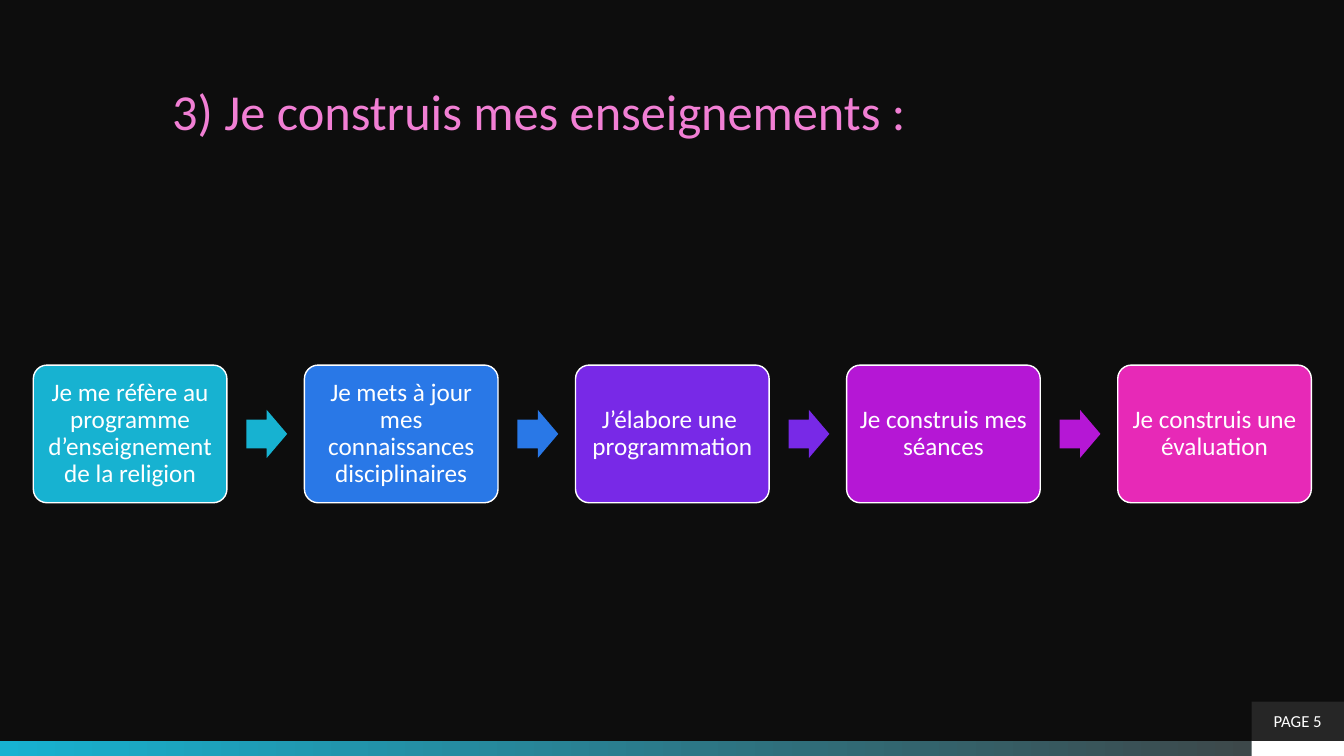
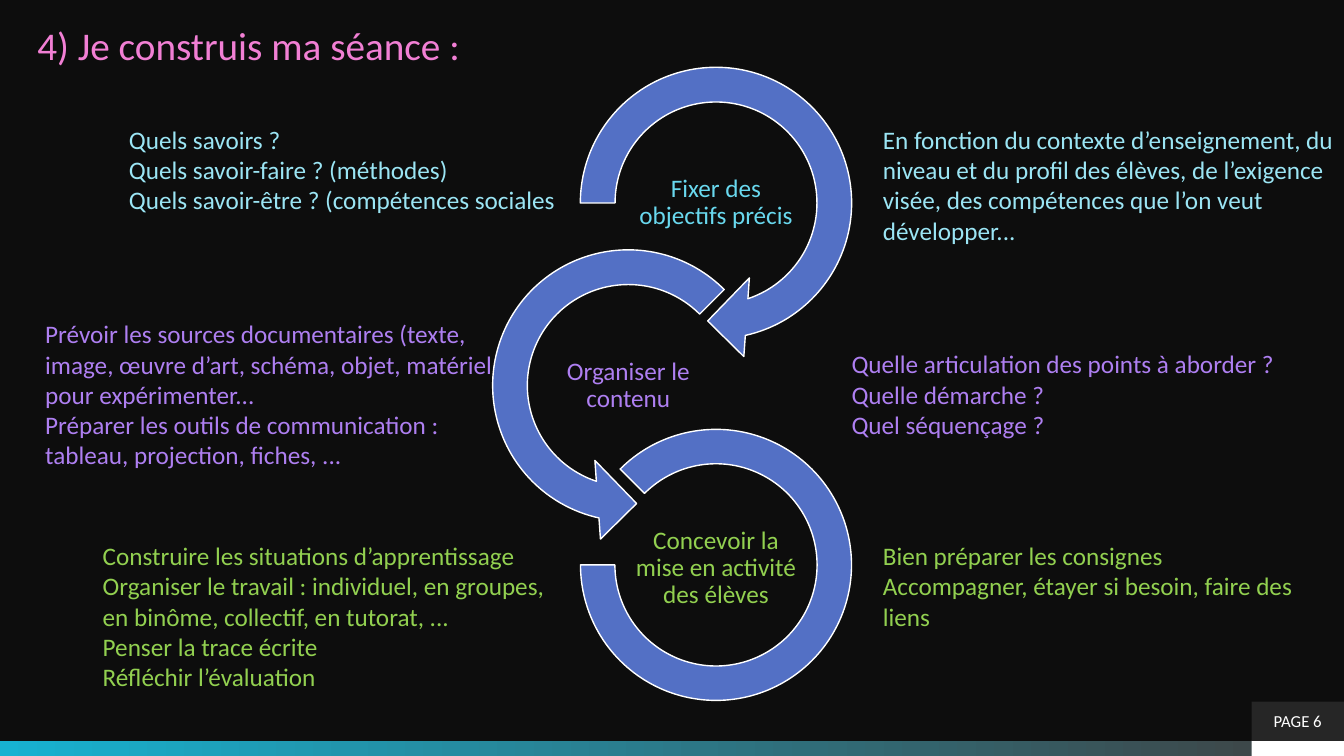
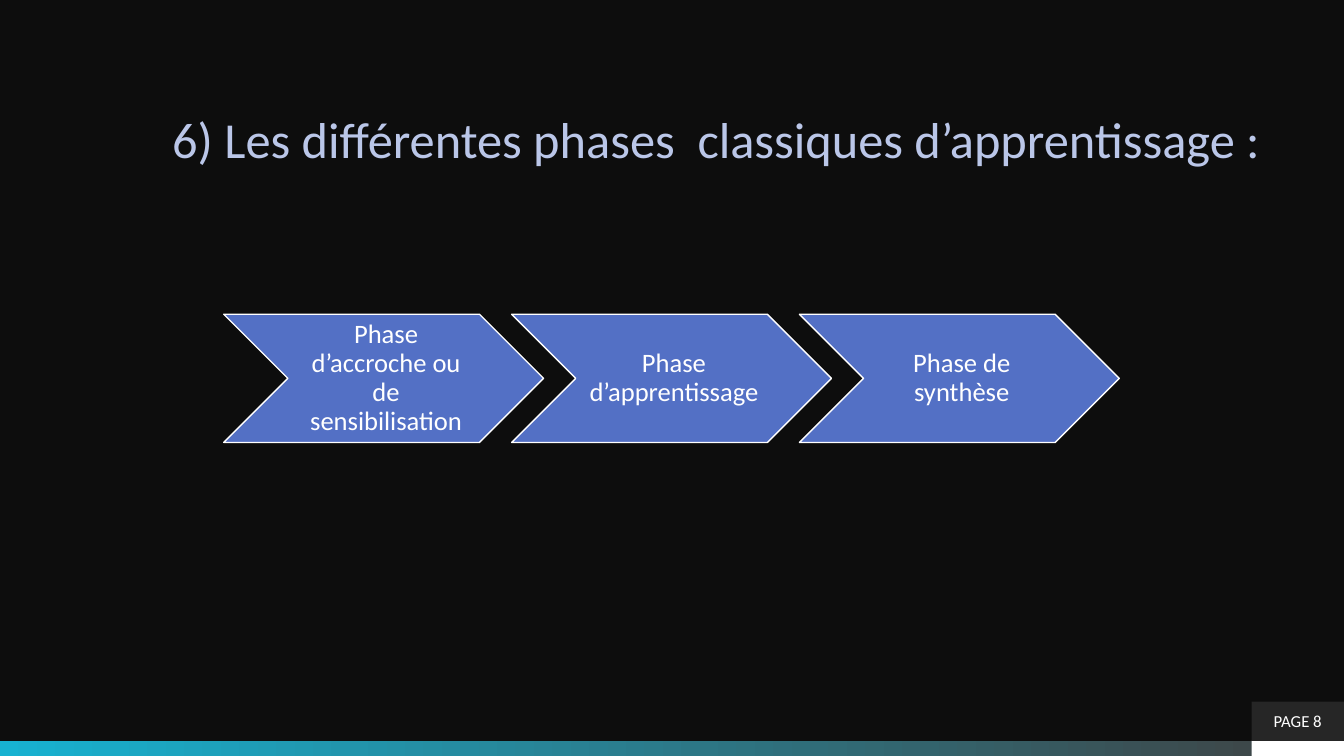
"""Build three slides on planning lessons."""
from dataclasses import dataclass

import pptx
import pptx.dml.color
import pptx.enum.shapes
import pptx.enum.text
import pptx.util

Cm = pptx.util.Cm
SHAPE = pptx.enum.shapes.MSO_SHAPE
ALIGN = pptx.enum.text.PP_ALIGN
ANCHOR = pptx.enum.text.MSO_ANCHOR
AUTO_SIZE = pptx.enum.text.MSO_AUTO_SIZE


@dataclass(frozen=True)
class Theme:
    """Hold the colours, font, type sizes and page size in centimetres."""
    font: str = "Calibri"
    background: str = "0D0D0D"
    white: str = "FFFFFF"
    tab: str = "262626"
    band_end: str = "404040"
    cyan: str = "17B2D1"
    cyan_light: str = "69D8EE"
    cyan_pale: str = "9BE5F4"
    blue: str = "5370C5"
    blue_pale: str = "BAC6E8"
    pink: str = "F17FD4"
    violet: str = "AE7FF1"
    green: str = "92D050"
    steps: tuple = ("17B2D1", "2978E7", "7829E7", "B517D5", "E729B7")
    title_size: int = 36
    small_title_size: int = 28
    text_size: int = 18
    chevron_size: int = 19
    page_size: int = 12
    width: float = 33.87
    height: float = 19.05
    band_height: float = 0.38
    tab_width: float = 2.33
    tab_height: float = 0.99


THEME = Theme()


def rgb(colour):
    """Turn a hexadecimal string into a colour."""
    return pptx.dml.color.RGBColor.from_string(colour)


def write(shape, lines, size, colour, align=ALIGN.LEFT, anchor=ANCHOR.TOP,
          spacing=None, margins=(0.25, 0.13, 0.25, 0.13)):
    """Fill a shape with formatted paragraphs."""
    frame = shape.text_frame
    frame.text = "\n".join(lines)
    frame.word_wrap = True
    frame.auto_size = AUTO_SIZE.NONE
    frame.vertical_anchor = anchor
    (frame.margin_left, frame.margin_top,
     frame.margin_right, frame.margin_bottom) = map(Cm, margins)
    for para in frame.paragraphs:
        para.alignment = align
        if spacing:
            para.line_spacing = spacing
        for span in para.runs:
            span.font.name = THEME.font
            span.font.size = pptx.util.Pt(size)
            span.font.color.rgb = rgb(colour)


def write_centred(shape, text, size, colour, margins):
    """Write one tightly spaced paragraph in the middle of a shape."""
    write(shape, [text], size, colour, ALIGN.CENTER, ANCHOR.MIDDLE, 0.9, margins)


def add_box(slide, kind, place, fill, outlined=False, adjustments=()):
    """Draw a preset shape with a plain fill and an optional white outline."""
    box = slide.shapes.add_shape(kind, *map(Cm, place))
    box.shadow.inherit = False
    box.fill.solid()
    box.fill.fore_color.rgb = rgb(fill)
    if outlined:
        box.line.color.rgb = rgb(THEME.white)
        box.line.width = pptx.util.Pt(1)
    else:
        box.line.fill.background()
    for index, value in enumerate(adjustments):
        box.adjustments[index] = value
    return box


def add_note(slide, place, lines, colour):
    """Place a text box that grows with its lines."""
    note = slide.shapes.add_textbox(*map(Cm, place))
    write(note, lines, THEME.text_size, colour)
    note.text_frame.auto_size = AUTO_SIZE.SHAPE_TO_FIT_TEXT


def add_page(deck, title, place, size, colour, number):
    """Add a slide with its title and page tab."""
    slide = deck.slides.add_slide(deck.slide_layouts[5])
    heading = slide.shapes.title
    heading.left, heading.top, heading.width, heading.height = map(Cm, place)
    write(heading, [title], size, colour)
    tab_top = THEME.height - THEME.band_height - THEME.tab_height
    tab = add_box(slide, SHAPE.RECTANGLE,
                  (THEME.width - THEME.tab_width, tab_top,
                   THEME.tab_width, THEME.tab_height), THEME.tab)
    write(tab, [f"PAGE {number}"], THEME.page_size, THEME.white,
          ALIGN.CENTER, ANCHOR.MIDDLE)
    return slide


def style_master(deck, slide):
    """Set the background and move the bottom bands to the master."""
    master = deck.slide_master
    master.background.fill.solid()
    master.background.fill.fore_color.rgb = rgb(THEME.background)
    top = THEME.height - THEME.band_height
    band = add_box(slide, SHAPE.RECTANGLE,
                   (0, top, THEME.width, THEME.band_height), THEME.cyan)
    band.fill.gradient()
    band.fill.gradient_angle = 0
    for stop, colour in zip(band.fill.gradient_stops, (THEME.cyan, THEME.band_end)):
        stop.color.rgb = rgb(colour)
    corner = add_box(slide, SHAPE.RECTANGLE,
                     (THEME.width - THEME.tab_width, top,
                      THEME.tab_width, THEME.band_height), THEME.white)
    for shape in (band, corner):
        shape.element.nvSpPr.cNvPr.set("id", str(len(master.shapes) + 2))
        master.element.cSld.spTree.append(shape.element)


def add_process(slide, steps):
    """Draw rounded steps joined by block arrows."""
    left, top, width, height = 0.84, 9.2, 4.88, 3.47
    arrow_width, arrow_height = 1.03, 1.21
    pitch = 1.4 * width
    for index, (text, colour) in enumerate(zip(steps, THEME.steps)):
        x = left + index * pitch
        box = add_box(slide, SHAPE.ROUNDED_RECTANGLE, (x, top, width, height),
                      colour, True, (0.1,))
        write_centred(box, text, THEME.text_size, THEME.white, (0.18,) * 4)
        if index < len(steps) - 1:
            add_box(slide, SHAPE.RIGHT_ARROW,
                    (x + 1.1 * width, top + (height - arrow_height) / 2,
                     arrow_width, arrow_height), colour, False, (0.6, 0.5))


def add_cycle(slide, labels):
    """Draw three linked circular arrows with a label in each."""
    ring, arc, pitch = 7.95, 6.83, 4.6
    rings = (
        (SHAPE.CIRCULAR_ARROW, (14.07, 1.14, ring, ring),
         (0.11, 11.42, 45, 108, 0.125)),
        (SHAPE.LEFT_CIRCULAR_ARROW, (11.86, 1.14 + pitch, ring, ring),
         (0.11, 11.42, 63, 189, 0.125)),
        (SHAPE.BLOCK_ARC, (14.63, 10.82, arc, arc), (135, 108, 0.127)),
    )
    for index, (kind, place, adjustments) in enumerate(rings):
        add_box(slide, kind, place, THEME.blue, True, adjustments)
        text, colour = labels[index]
        x = place[0] + place[2] / 2 - 2.21
        label = slide.shapes.add_textbox(
            Cm(x), Cm(4.01 + index * pitch), Cm(4.42), Cm(2.21))
        write_centred(label, text, THEME.text_size, colour, (0.03,) * 4)


def add_chevrons(slide, phases):
    """Draw a row of overlapping chevrons."""
    left, top, width, height = 5.64, 7.92, 8.06, 3.23
    for index, text in enumerate(phases):
        chevron = add_box(slide, SHAPE.CHEVRON,
                          (left + index * 0.9 * width, top, width, height),
                          THEME.blue, True)
        write_centred(chevron, text, THEME.chevron_size, THEME.white,
                      (0.2, 0.08, 0.08, 0.08))


def build_teaching(deck):
    """Build the slide on preparing the teaching."""
    slide = add_page(deck, "3) Je construis mes enseignements :",
                     (4.09, 1.9, 24.71, 1.8), THEME.title_size, THEME.pink, 5)
    style_master(deck, slide)
    add_process(slide, (
        "Je me réfère au programme d’enseignement de la religion",
        "Je mets à jour mes connaissances disciplinaires",
        "J’élabore une  programmation",
        "Je construis mes séances",
        "Je construis une évaluation",
    ))


def build_session(deck):
    """Build the slide on preparing one session."""
    slide = add_page(deck, "4) Je construis ma séance :",
                     (0.69, 0.41, 22.1, 1.45), THEME.small_title_size, THEME.pink, 6)
    add_cycle(slide, (
        ("Fixer des objectifs précis", THEME.cyan_light),
        ("Organiser le contenu", THEME.violet),
        ("Concevoir la mise en activité des élèves", THEME.green),
    ))
    notes = (
        ((3, 3, 12.32, 3.33), THEME.cyan_pale, (
            "Quels savoirs ?",
            "Quels savoir-faire ? (méthodes)",
            "Quels savoir-être ? (compétences sociales")),
        ((21.21, 8.66, 12.32, 2.57), THEME.violet, (
            "Quelle articulation des points à aborder ?",
            "Quelle démarche ?",
            "Quel séquençage ?")),
        ((22, 3, 12.32, 4.11), THEME.cyan_pale, (
            "En fonction du contexte d’enseignement, du niveau et du profil "
            "des élèves, de l’exigence visée, des compétences que l’on veut "
            "développer...",)),
        ((0.89, 7.9, 12.32, 4.11), THEME.violet, (
            "Prévoir les sources documentaires (texte, image, œuvre d’art, "
            "schéma, objet, matériel pour expérimenter...",
            "Préparer les outils de communication : tableau, projection, "
            "fiches, ...")),
        ((2.34, 13.49, 12.32, 4.11), THEME.green, (
            "Construire les situations d’apprentissage Organiser le travail : "
            "individuel, en groupes, en binôme, collectif, en tutorat, ...",
            "Penser la trace écrite",
            "Réfléchir l’évaluation")),
        ((22, 13.49, 11.18, 3.33), THEME.green, (
            "Bien préparer les consignes",
            "Accompagner, étayer si besoin, faire des liens")),
    )
    for place, colour, lines in notes:
        add_note(slide, place, lines, colour)


def build_phases(deck):
    """Build the slide on the learning phases."""
    slide = add_page(deck, "6) Les différentes phases  classiques d’apprentissage :",
                     (4.09, 2.59, 28.83, 1.8), THEME.title_size, THEME.blue_pale, 8)
    add_chevrons(slide, (
        "Phase d’accroche ou de sensibilisation",
        "Phase d’apprentissage",
        "Phase de synthèse",
    ))


def main():
    """Build and save the deck."""
    deck = pptx.Presentation()
    deck.slide_width, deck.slide_height = Cm(THEME.width), Cm(THEME.height)
    build_teaching(deck)
    build_session(deck)
    build_phases(deck)
    deck.save("out.pptx")


if __name__ == "__main__":
    main()
